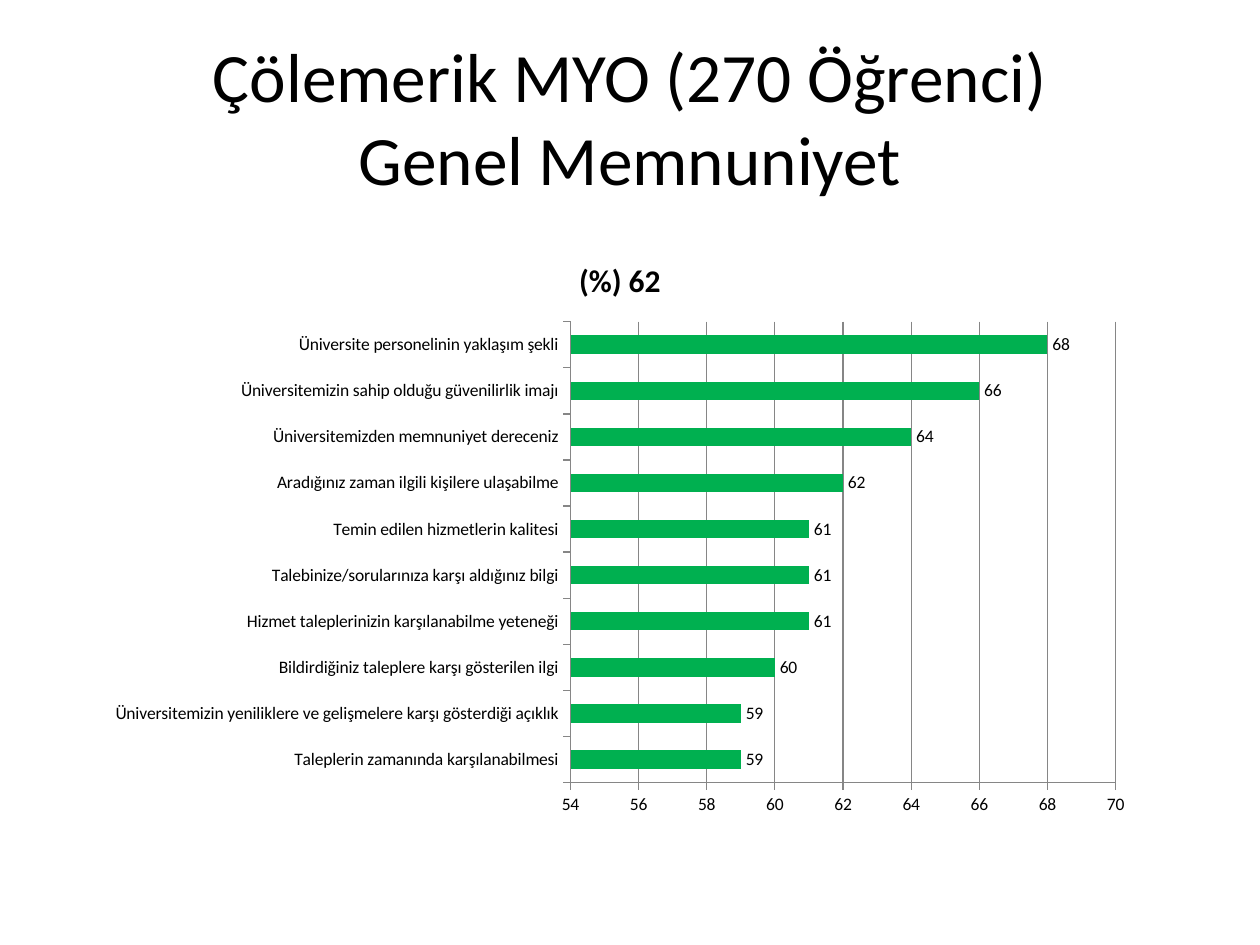
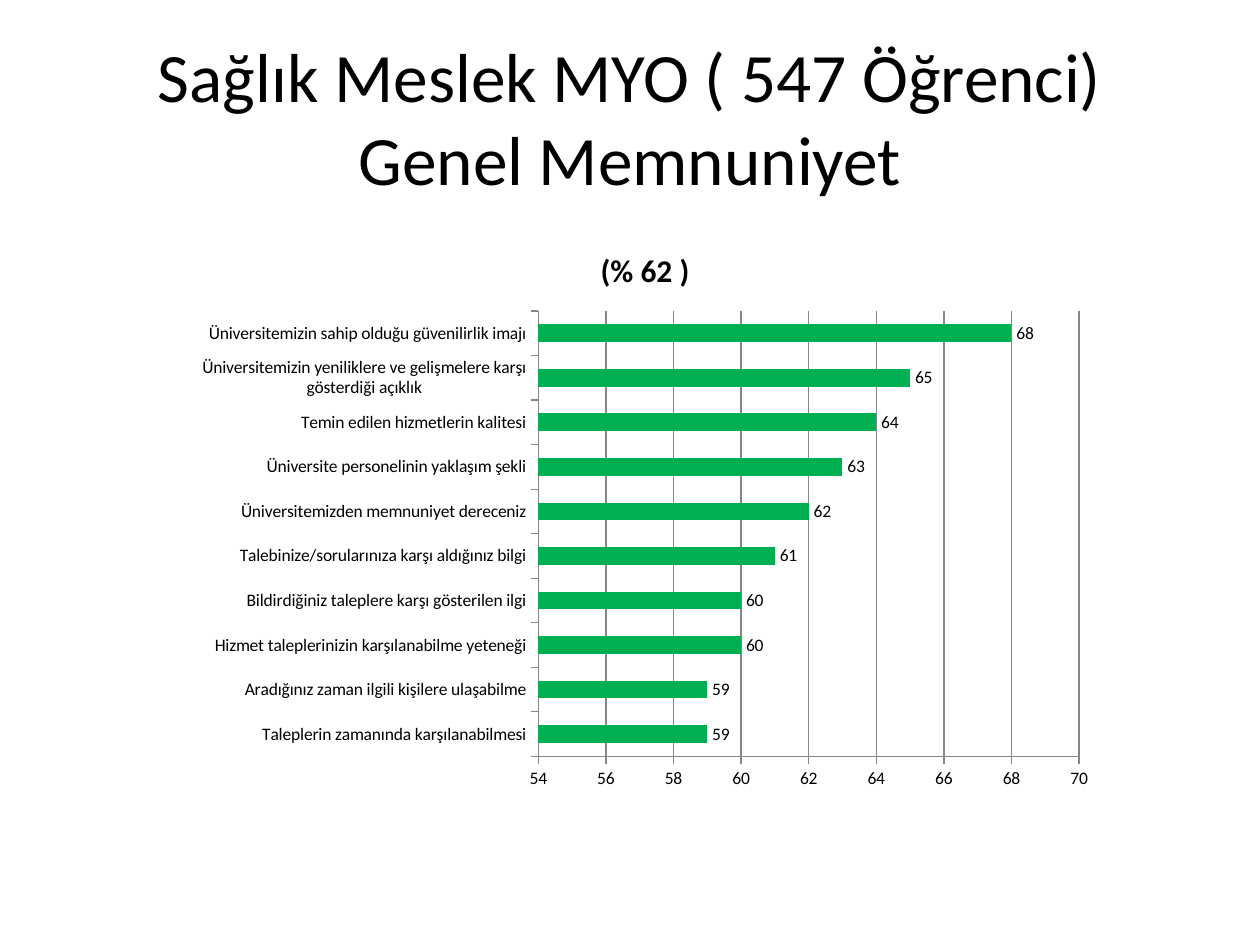
"""Builds two student satisfaction slides, each with a title and a bar chart."""
from pptx import Presentation
from pptx.chart.data import CategoryChartData
from pptx.dml.color import RGBColor
from pptx.enum.chart import XL_CHART_TYPE, XL_LABEL_POSITION, XL_TICK_MARK
from pptx.enum.text import MSO_ANCHOR, MSO_AUTO_SIZE, PP_ALIGN
from pptx.util import Pt

BAR = XL_CHART_TYPE.BAR_CLUSTERED
OUTSIDE_END = XL_LABEL_POSITION.OUTSIDE_END
TICK_OUT, TICK_NONE = XL_TICK_MARK.OUTSIDE, XL_TICK_MARK.NONE
MIDDLE, CENTER, NO_FIT = MSO_ANCHOR.MIDDLE, PP_ALIGN.CENTER, MSO_AUTO_SIZE.NONE

FONT = "Calibri"
COLORS = {"text": "000000", "bar": "00B050", "line": "868686"}
TITLE_BOX = (36, 21.6, 648, 90)

TIMELY = "Taleplerin zamanında karşılanabilmesi"
OPENNESS = "Üniversitemizin yeniliklere ve gelişmelere karşı gösterdiği açıklık"
INTEREST = "Bildirdiğiniz taleplere karşı gösterilen ilgi"
ABILITY = "Hizmet taleplerinizin karşılanabilme yeteneği"
INFORMATION = "Talebinize/sorularınıza karşı aldığınız bilgi"
QUALITY = "Temin edilen hizmetlerin kalitesi"
ACCESS = "Aradığınız zaman ilgili kişilere ulaşabilme"
SATISFACTION = "Üniversitemizden memnuniyet dereceniz"
TRUST = "Üniversitemizin sahip olduğu güvenilirlik imajı"
STAFF = "Üniversite personelinin yaklaşım şekli"

SLIDES = [
    {
        "title": "Çölemerik MYO (270 Öğrenci)\vGenel Memnuniyet",
        "chart_title": "(%) 62",
        "box": (54, 133.92, 600.48, 338.4),
        "scores": [
            (TIMELY, 59), (OPENNESS, 59), (INTEREST, 60), (ABILITY, 61),
            (INFORMATION, 61), (QUALITY, 61), (ACCESS, 62),
            (SATISFACTION, 64), (TRUST, 66), (STAFF, 68),
        ],
    },
    {
        "title": "Sağlık Meslek MYO ( 547 Öğrenci)\vGenel Memnuniyet",
        "chart_title": "(% 62 )",
        "box": (105.12, 128.16, 527.04, 329.04),
        "scores": [
            (TIMELY, 59), (ACCESS, 59), (ABILITY, 60), (INTEREST, 60),
            (INFORMATION, 61), (SATISFACTION, 62), (STAFF, 63),
            (QUALITY, 64), (OPENNESS, 65), (TRUST, 68),
        ],
    },
]


def rgb(name):
    return RGBColor.from_string(COLORS[name])


def set_font(font, size, bold=False, color="text"):
    font.name, font.size, font.bold = FONT, Pt(size), bold
    font.color.rgb = rgb(color)


def write(tf, text, size, bold=False, color="text", align=CENTER):
    p = tf.paragraphs[0]
    p.text, p.alignment = text, align
    for r in p.runs:
        set_font(r.font, size, bold, color)


def set_line(fmt):
    fmt.line.color.rgb, fmt.line.width = rgb("line"), Pt(0.75)


def add_title(s, text):
    sp = s.shapes.title
    sp.left, sp.top, sp.width, sp.height = map(Pt, TITLE_BOX)
    tf = sp.text_frame
    tf.auto_size, tf.vertical_anchor, tf.word_wrap = NO_FIT, MIDDLE, True
    write(tf, text, size=39.6)


def add_bars(s, title, box, scores):
    data = CategoryChartData(number_format="0")
    data.categories = [name for name, _ in scores]
    data.add_series("Series 1", [score for _, score in scores])
    chart = s.shapes.add_chart(BAR, *map(Pt, box), data).chart
    set_font(chart.font, 10)
    chart.has_legend = False
    chart.has_title = True
    write(chart.chart_title.text_frame, title, size=18, bold=True)
    chart.chart_title.include_in_layout = False

    for axis in (chart.category_axis, chart.value_axis):
        axis.major_tick_mark, axis.minor_tick_mark = TICK_OUT, TICK_NONE
        set_line(axis.format)
    axis = chart.value_axis
    axis.minimum_scale, axis.maximum_scale, axis.major_unit = 54, 70, 2
    axis.has_major_gridlines = True
    set_line(axis.major_gridlines.format)
    axis.tick_labels.number_format = "0"
    axis.tick_labels.number_format_is_linked = False

    plot = chart.plots[0]
    plot.gap_width, plot.vary_by_categories = 150, False
    fill = plot.series[0].format.fill
    fill.solid()
    fill.fore_color.rgb = rgb("bar")
    plot.has_data_labels = True
    labels = plot.data_labels
    labels.show_value, labels.position = True, OUTSIDE_END
    labels.number_format, labels.number_format_is_linked = "0", False
    set_font(labels.font, 10)


def main():
    prs = Presentation()
    prs.slide_width, prs.slide_height = Pt(720), Pt(540)
    for page in SLIDES:
        s = prs.slides.add_slide(prs.slide_layouts[5])
        add_title(s, page["title"])
        add_bars(s, page["chart_title"], page["box"], page["scores"])
    prs.save("out.pptx")


if __name__ == "__main__":
    main()
